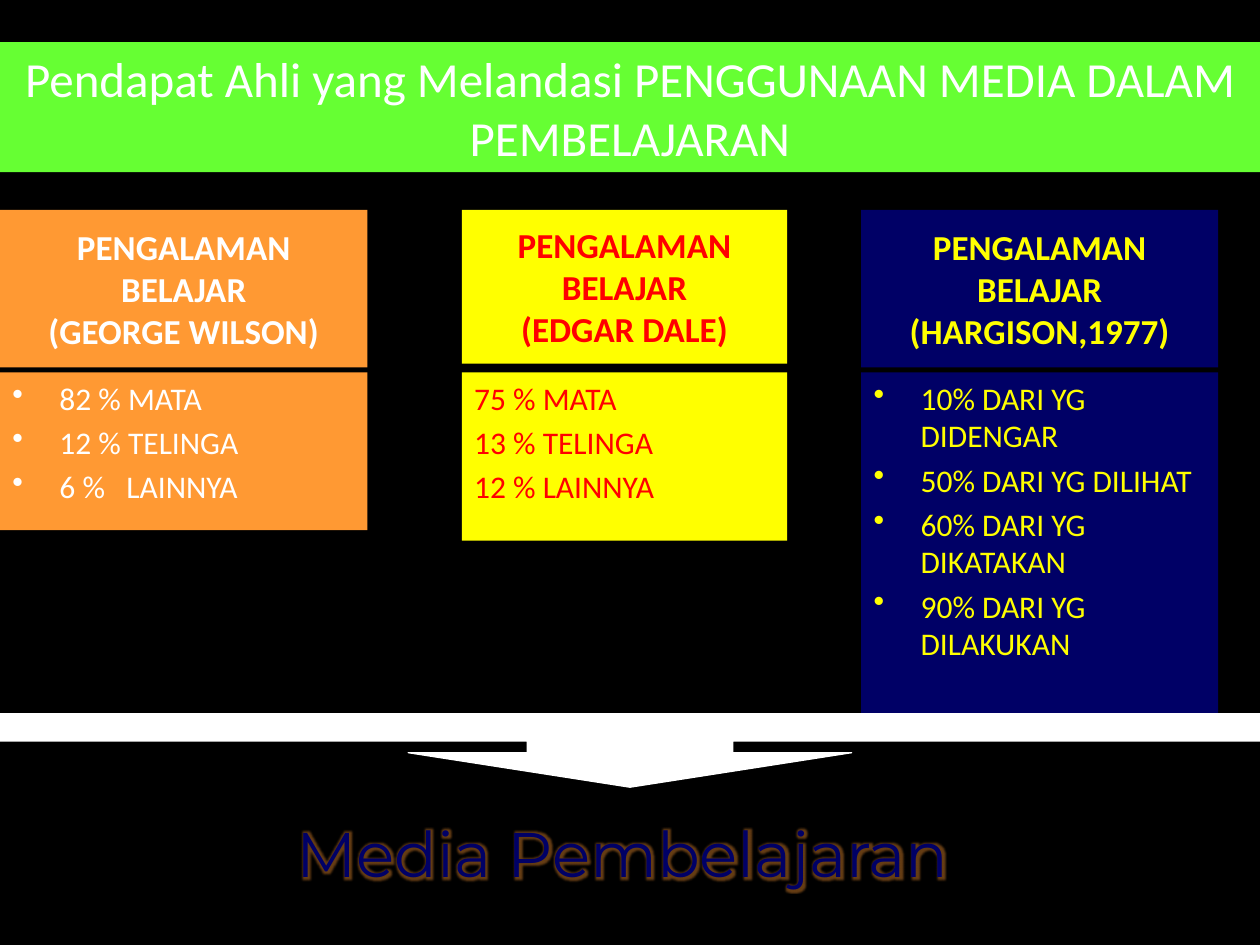
import pptx
import pptx.util
import pptx.dml.color
import pptx.enum.shapes
import pptx.enum.text
import pptx.oxml
import pptx.oxml.ns

Cm = pptx.util.Cm
Pt = pptx.util.Pt
RGB = pptx.dml.color.RGBColor
SHAPE = pptx.enum.shapes.MSO_SHAPE
ALIGN = pptx.enum.text.PP_ALIGN
ANCHOR = pptx.enum.text.MSO_ANCHOR
NS = pptx.oxml.ns.nsdecls("a")

BLACK = RGB(0x00, 0x00, 0x00)
WHITE = RGB(0xFF, 0xFF, 0xFF)
GREEN = RGB(0x66, 0xFF, 0x33)
ORANGE = RGB(0xFF, 0x99, 0x33)
YELLOW = RGB(0xFF, 0xFF, 0x00)
RED = RGB(0xFF, 0x00, 0x00)
NAVY = RGB(0x00, 0x00, 0x66)

HEAD_TOP, BODY_TOP = 4.23, 7.51
INDENT = 0.95


def add_box(left, top, width, height, fill, anchor):
    sp = s.shapes.add_shape(SHAPE.RECTANGLE, Cm(left), Cm(top), Cm(width), Cm(height))
    sp.shadow.inherit = False
    sp.fill.solid()
    sp.fill.fore_color.rgb = fill
    sp.line.fill.background()
    sp.text_frame.word_wrap = True
    sp.text_frame.vertical_anchor = anchor
    return sp.text_frame


def format_text(p, size, color, align, bold=False, font="Calibri"):
    p.alignment = align
    for r in p.runs:
        r.font.size = Pt(size)
        r.font.name = font
        r.font.bold = bold
        r.font.color.rgb = color


prs = pptx.Presentation()
prs.slide_width, prs.slide_height = Cm(25.4), Cm(19.05)
s = prs.slides.add_slide(prs.slide_layouts[5])
s.background.fill.solid()
s.background.fill.fore_color.rgb = BLACK

title = s.shapes.title
title.left, title.top, title.width, title.height = Cm(0), Cm(0.85), Cm(25.4), Cm(2.62)
title.fill.solid()
title.fill.fore_color.rgb = GREEN
tf = title.text_frame
tf.text = "Pendapat Ahli yang Melandasi PENGGUNAAN MEDIA DALAM PEMBELAJARAN"
tf.word_wrap = True
tf.auto_size = pptx.enum.text.MSO_AUTO_SIZE.NONE
tf.vertical_anchor = ANCHOR.MIDDLE
format_text(tf.paragraphs[0], 28, WHITE, ALIGN.CENTER)

columns = [
    (0, 7.41, 3.18, 3.18, ORANGE, WHITE, True, "PENGALAMAN BELAJAR\v(GEORGE WILSON)",
     ["82 % MATA", "12 % TELINGA", "6 %\tLAINNYA"]),
    (9.31, 6.56, 3.1, 3.39, YELLOW, RED, False, "PENGALAMAN BELAJAR\v(EDGAR DALE)",
     ["75 % MATA", "13 % TELINGA", "12 % LAINNYA"]),
    (17.36, 7.2, 3.18, 6.99, NAVY, YELLOW, True, "PENGALAMAN BELAJAR\v(HARGISON,1977)",
     ["10% DARI YG DIDENGAR", "50% DARI YG DILIHAT",
      "60% DARI YG DIKATAKAN", "90% DARI YG DILAKUKAN"]),
]
for left, width, head_h, body_h, fill, color, bullets, heading, items in columns:
    tf = add_box(left, HEAD_TOP, width, head_h, fill, ANCHOR.MIDDLE)
    p = tf.paragraphs[0]
    p.text = heading
    format_text(p, 20, color, ALIGN.CENTER, bold=True)

    tf = add_box(left, BODY_TOP, width, body_h, fill, ANCHOR.TOP)
    tf.text = "\n".join(items)
    for i, p in enumerate(tf.paragraphs):
        pPr = p._p.get_or_add_pPr()
        if bullets:
            pPr.set("marL", str(Cm(INDENT)))
            pPr.set("indent", str(-Cm(INDENT)))
            pPr.append(pptx.oxml.parse_xml(f'<a:buChar {NS} char="•"/>'))
        if "\t" in p.text:
            pPr.append(pptx.oxml.parse_xml(
                f'<a:tabLst {NS}><a:tab pos="{Cm(2.3)}" algn="l"/></a:tabLst>'))
        if i:
            p.space_before = Pt(3.6)
        format_text(p, 18, color, ALIGN.LEFT)

sp = s.shapes.add_shape(SHAPE.DOWN_ARROW_CALLOUT, Cm(0), Cm(14.39), Cm(25.4), Cm(1.48))
sp.shadow.inherit = False
for i, value in enumerate([2.8, 3.02, 0.47, 0.37]):
    sp.adjustments[i] = value
sp.fill.solid()
sp.fill.fore_color.rgb = WHITE
sp.line.color.rgb = WHITE
sp.line.width = Pt(0.75)

tf = s.shapes.add_textbox(Cm(5.5), Cm(16.3), Cm(14.1), Cm(1.8)).text_frame
tf.word_wrap = False
p = tf.paragraphs[0]
p.text = "Media Pembelajaran"
format_text(p, 36, NAVY, ALIGN.CENTER, font="Montserrat")
rPr = p.runs[0]._r.get_or_add_rPr()
rPr.insert(0, pptx.oxml.parse_xml(
    f'<a:ln {NS} w="{Pt(0.75)}"><a:solidFill><a:srgbClr val="{BLACK}"/></a:solidFill></a:ln>'))
rPr.insert(2, pptx.oxml.parse_xml(
    f'<a:effectLst {NS}><a:glow rad="{Pt(5)}"><a:srgbClr val="{ORANGE}">'
    '<a:alpha val="40000"/></a:srgbClr></a:glow></a:effectLst>'))

prs.save("out.pptx")
